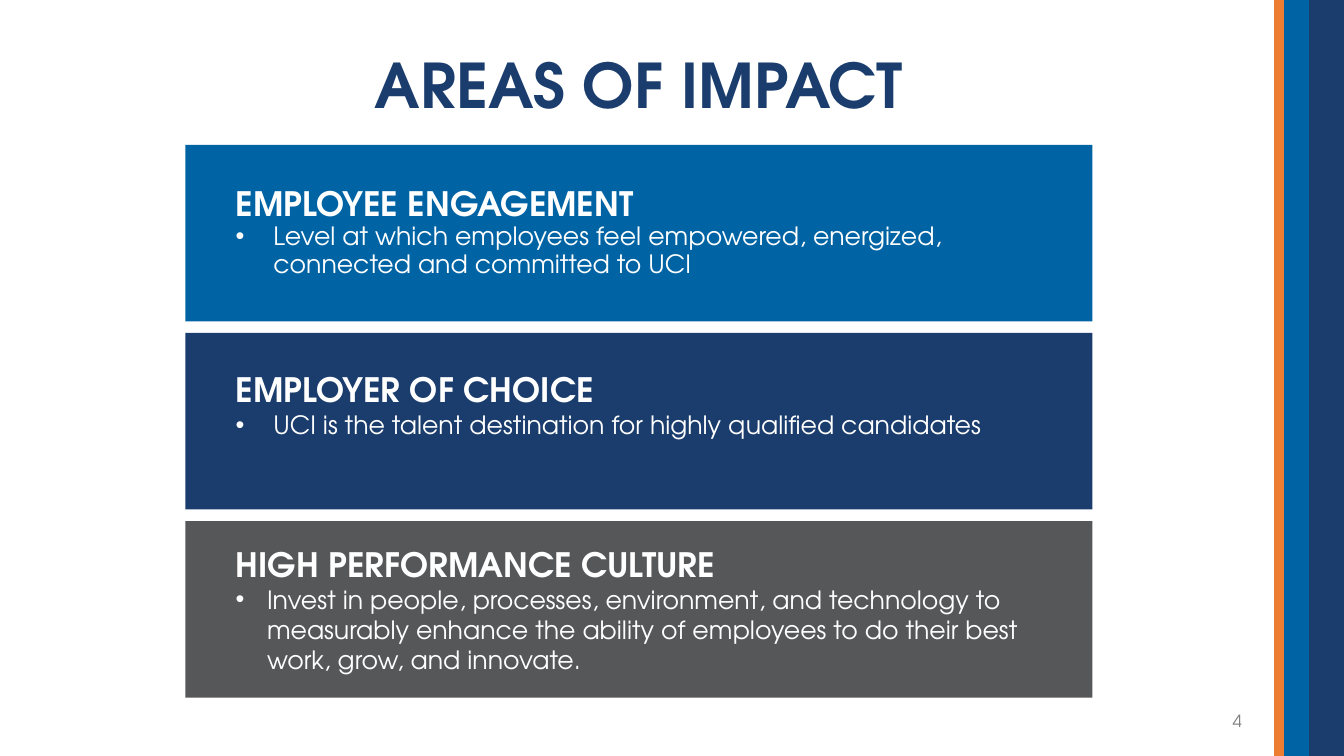
from collections import namedtuple

from lxml import etree
from pptx import Presentation
from pptx.dml.color import RGBColor
from pptx.enum.shapes import MSO_SHAPE
from pptx.enum.text import MSO_ANCHOR, PP_ALIGN
from pptx.oxml.ns import qn
from pptx.util import Cm, Pt

RECTANGLE = MSO_SHAPE.RECTANGLE
TOP, MIDDLE = MSO_ANCHOR.TOP, MSO_ANCHOR.MIDDLE
LEFT, CENTER, RIGHT = PP_ALIGN.LEFT, PP_ALIGN.CENTER, PP_ALIGN.RIGHT

FONT = "TeX Gyre Adventor"
NAVY = RGBColor(0x1B, 0x3D, 0x6D)
BLUE = RGBColor(0x00, 0x64, 0xA4)
ORANGE = RGBColor(0xED, 0x7D, 0x31)
SLATE = RGBColor(0x55, 0x57, 0x59)
NUMBER_GRAY = RGBColor(0x80, 0x80, 0x80)
WHITE = RGBColor(0xFF, 0xFF, 0xFF)

PAGE_WIDTH, PAGE_HEIGHT = 33.87, 19.05
Box = namedtuple("Box", "left top width height")
Area = namedtuple("Area", "heading detail color indent spacing bottom")

AREAS = [
    Area("EMPLOYEE ENGAGEMENT",
         "Level at which employees feel empowered, energized, "
         "connected and committed to UCI",
         BLUE, 0.95, 0.9, 0.13),
    Area("EMPLOYER OF CHOICE",
         "UCI is the talent destination for highly qualified candidates",
         NAVY, 0.95, 1.0, 0.98),
    Area("HIGH PERFORMANCE CULTURE",
         "Invest in people, processes, environment, and technology to "
         "measurably enhance the ability of employees to do their best "
         "work, grow, and innovate.",
         SLATE, 0.79, 1.0, 0.13),
]
STRIPES = [(0.25, ORANGE), (0.63, BLUE), (0.88, NAVY)]


def to_cm(box):
    return [Cm(length) for length in box]


def add_span(para, text, size, color, bold=False):
    span = para.add_run()
    span.text = text
    span.font.name = FONT
    span.font.size = Pt(size)
    span.font.bold = bold
    span.font.color.rgb = color


def add_bullet(para, indent):
    properties = para._p.get_or_add_pPr()
    properties.set("marL", str(Cm(indent)))
    properties.set("indent", str(-Cm(indent)))
    etree.SubElement(properties, qn("a:buFont")).set("typeface", "Arial")
    etree.SubElement(properties, qn("a:buChar")).set("char", "•")


def add_block(page, box, color):
    block = page.shapes.add_shape(RECTANGLE, *to_cm(box))
    block.shadow.inherit = False
    block.fill.solid()
    block.fill.fore_color.rgb = color
    block.line.fill.background()
    return block


def add_label(page, box, text, size, color, align, anchor, bold=False, spacing=1.0):
    frame = page.shapes.add_textbox(*to_cm(box)).text_frame
    frame.word_wrap = True
    frame.vertical_anchor = anchor
    para = frame.paragraphs[0]
    para.alignment = align
    para.line_spacing = spacing
    add_span(para, text, size, color, bold)


def add_stripes(page, box):
    left = box.left
    for width, color in STRIPES:
        add_block(page, Box(left, box.top, width, box.height), color)
        left += width


def add_area(page, box, area):
    frame = add_block(page, box, area.color).text_frame
    frame.word_wrap = True
    frame.vertical_anchor = MIDDLE
    frame.margin_left, frame.margin_right = Cm(1.27), Cm(0.76)
    frame.margin_top, frame.margin_bottom = Cm(0.13), Cm(area.bottom)
    heading, detail = frame.paragraphs[0], frame.add_paragraph()
    add_bullet(detail, area.indent)
    for para in (heading, detail):
        para.alignment = LEFT
        para.line_spacing = area.spacing
    add_span(heading, area.heading, 24, WHITE, bold=True)
    add_span(detail, area.detail, 18, WHITE)


def add_areas(page, box):
    gap = 0.29
    height = (box.height - gap * (len(AREAS) - 1)) / len(AREAS)
    for index, area in enumerate(AREAS):
        top = box.top + index * (height + gap)
        add_area(page, Box(box.left, top, box.width, height), area)


def main():
    deck = Presentation()
    deck.slide_width, deck.slide_height = Cm(PAGE_WIDTH), Cm(PAGE_HEIGHT)
    page = deck.slides.add_slide(deck.slide_layouts[6])
    add_stripes(page, Box(32.11, 0, 1.76, PAGE_HEIGHT))
    add_label(page, Box(4.67, 1.27, 22.86, 1.96), "AREAS OF IMPACT",
              44, NAVY, CENTER, TOP, bold=True, spacing=0.9)
    add_label(page, Box(23.93, 17.65, 7.62, 1.02), "4",
              12, NUMBER_GRAY, RIGHT, MIDDLE)
    add_areas(page, Box(4.67, 3.65, 22.86, 13.93))
    deck.save("out.pptx")


if __name__ == "__main__":
    main()
